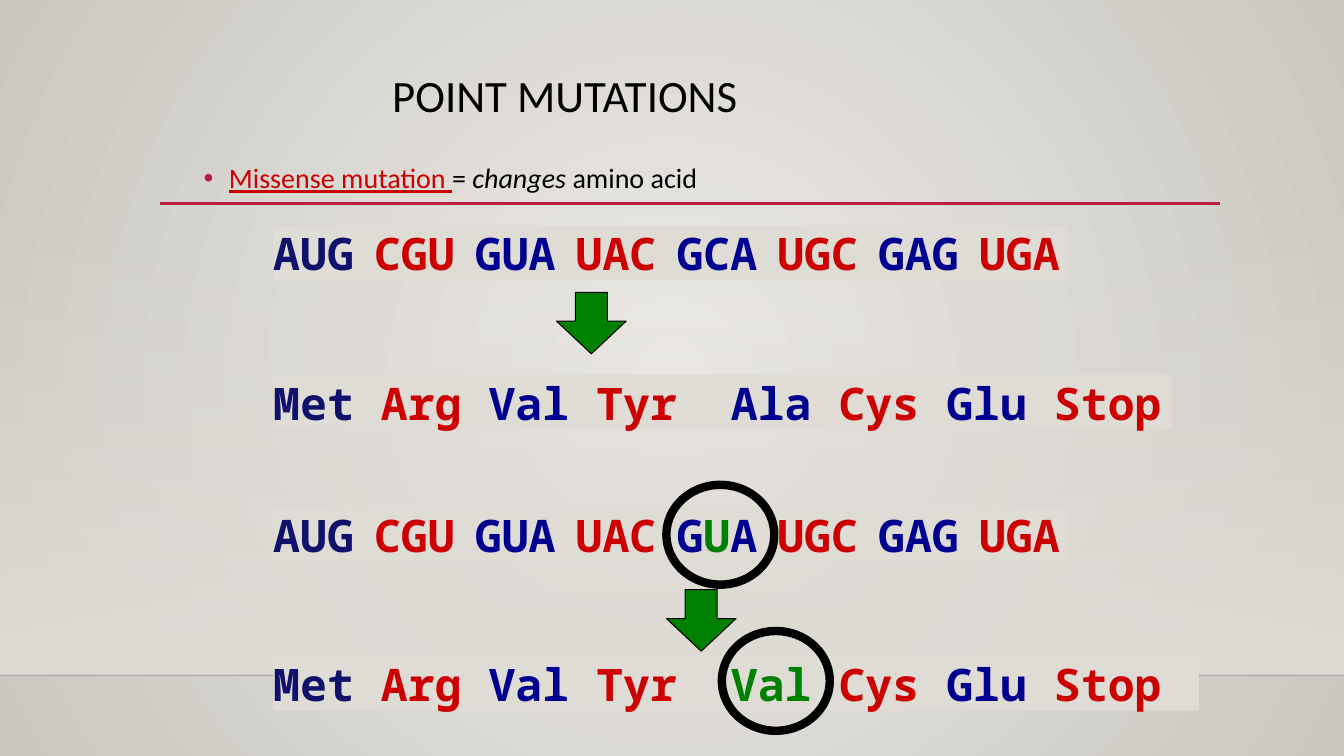
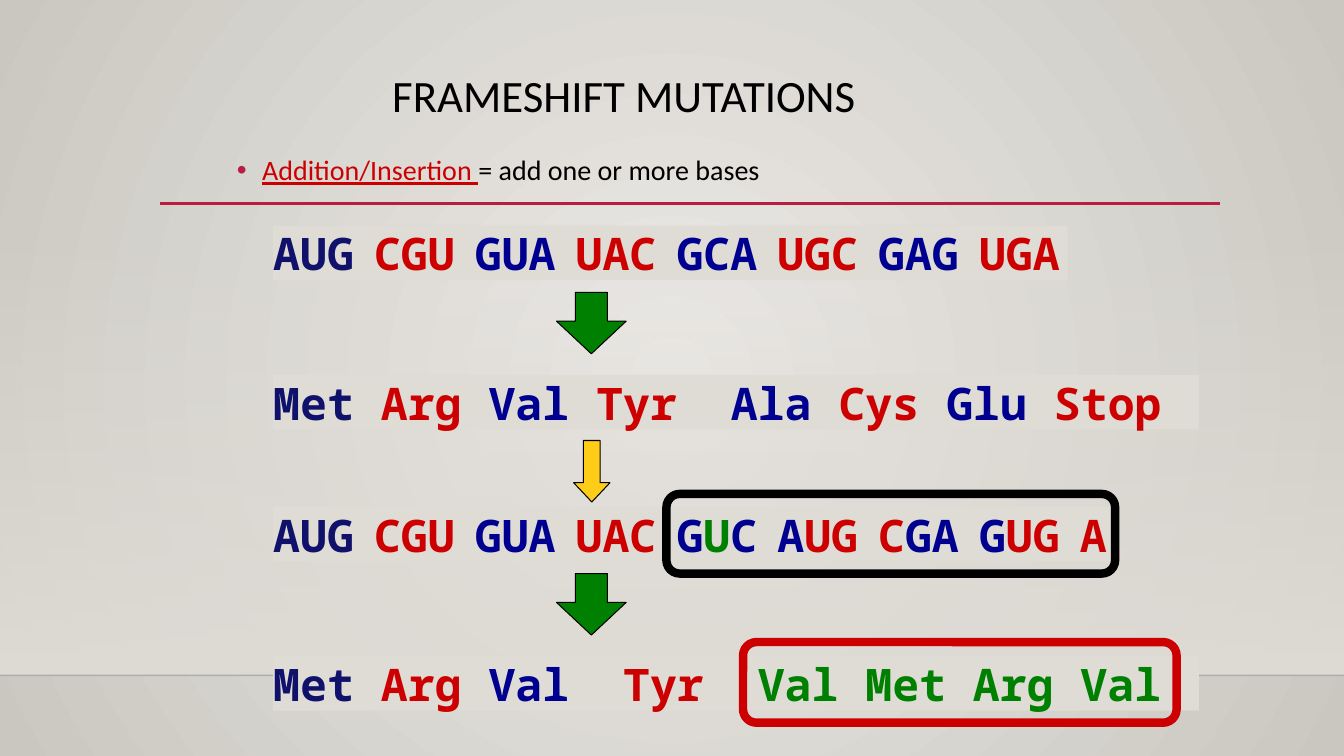
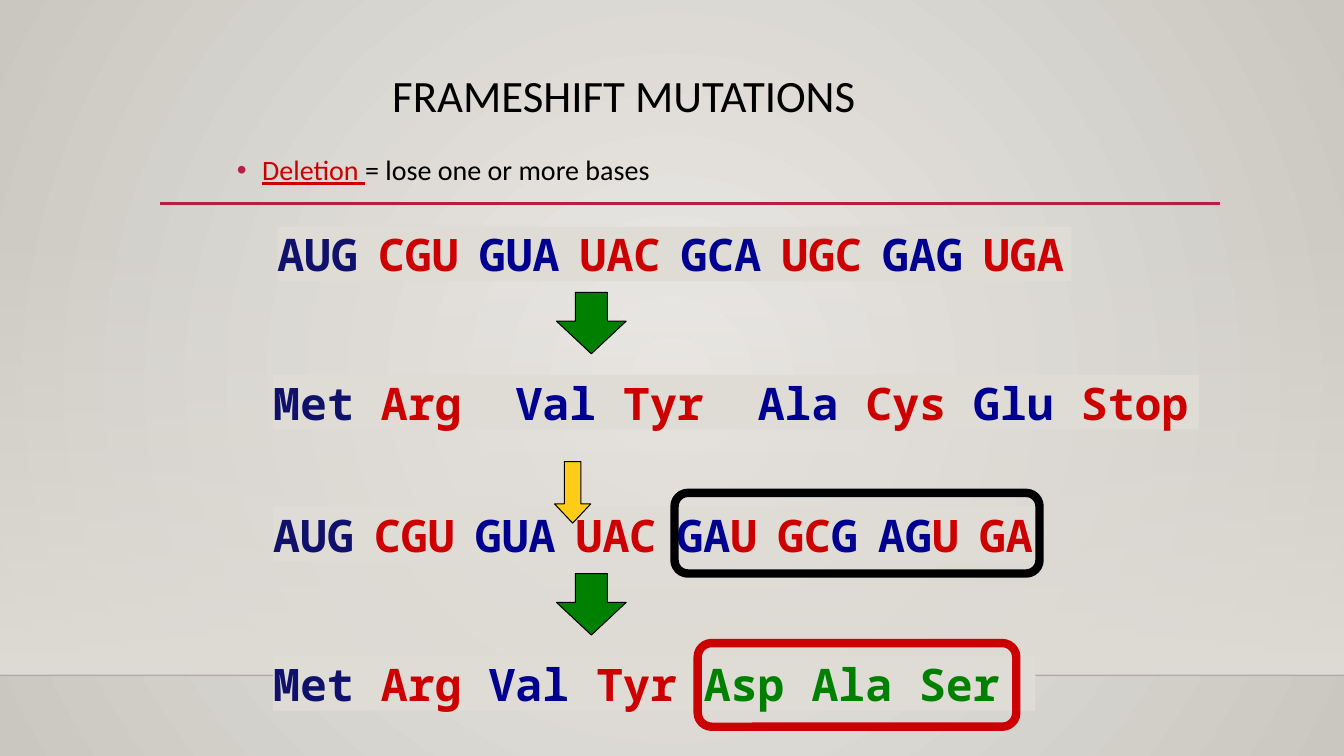
from pptx import Presentation
from pptx import util as u
from pptx.dml import color
from pptx.enum import shapes, text
from pptx.oxml import parse_xml
from pptx.oxml.ns import nsdecls, qn

C = {"navy": "0F116A", "red": "CC0000", "blue": "000090", "green": "008000",
     "gold": "FFCC18", "black": "000000", "accent": "B71E42", "panel": "DFDBD5",
     "edge": "000001", "glow": "ECEAE7", "rim": "CAC7C1"}
KEYS = {"n": "navy", "r": "red", "b": "blue", "g": "green"}
SANS, MONO = "Calibri", "Noto Sans Mono"
LEFT, ROW_H = 2.71, 0.54
ROW_TOPS = [2.24, 3.72, 5.03, 6.51]
RIGHT_ARROW_X, ARROW_X = 6.61, 5.52
DNA_START = "AUG\t|CGU\t|GUA\t|UAC\t|"
DNA = DNA_START + "GCA\t|UGC\t|GAG\t|UGA"
PROTEIN = "Met |Arg |Val |Tyr  |Ala |Cys |Glu |Stop"
NORMAL = "nrbrbrbr"
SHAPE = shapes.MSO_SHAPE


def rgb(name):
    return color.RGBColor.from_string(C[name])


def inches(box):
    return [u.Inches(v) for v in box]


def xml(tag, attrs="", inner=""):
    return parse_xml(f"<a:{tag} {nsdecls('a')} {attrs}>{inner}</a:{tag}>")


def gradient(first, last, direction, alpha=""):
    return xml("gradFill", 'rotWithShape="1"',
               f'<a:gsLst><a:gs pos="0"><a:srgbClr val="{C[first]}">{alpha}</a:srgbClr></a:gs>'
               f'<a:gs pos="100000"><a:srgbClr val="{C[last]}"/></a:gs></a:gsLst>{direction}')


def replace_gradient(fill, parent, new):
    fill.gradient()
    old = parent.find(qn("a:gradFill"))
    parent.replace(old, new)


def add_shape(s, kind, box, fill=None, line=None, width=0.75, adj=()):
    sp = s.shapes.add_shape(kind, *inches(box))
    sp.shadow.inherit = False
    for i, value in enumerate(adj):
        sp.adjustments[i] = value
    if fill:
        sp.fill.solid()
        sp.fill.fore_color.rgb = rgb(fill)
    else:
        sp.fill.background()
    if line:
        sp.line.color.rgb = rgb(line)
        sp.line.width = u.Pt(width)
    else:
        sp.line.fill.background()
    return sp


def add_line(s, x1, x2, y, name, width):
    ln = s.shapes.add_connector(shapes.MSO_CONNECTOR.STRAIGHT, *inches((x1, y, x2, y)))
    ln.line.color.rgb = rgb(name)
    ln.line.width = u.Pt(width)
    ln._element.spPr.append(xml("effectLst"))
    return ln


def add_run(p, txt, size, name, font, **style):
    r = p.add_run()
    r.text = txt
    r.font.size = u.Pt(size)
    r.font.name = font
    r.font.color.rgb = rgb(name)
    for key, value in style.items():
        setattr(r.font, key, value)


def build_master(prs, s):
    master = prs.slide_master
    fill = master.background.fill
    fill.solid()
    bg = master._element.cSld.find(qn("p:bg")).find(qn("p:bgPr"))
    replace_gradient(fill, bg, gradient(
        "glow", "rim",
        '<a:path path="circle"><a:fillToRect l="50000" t="50000" r="50000" b="50000"/></a:path>'))
    wall = add_shape(s, SHAPE.RECTANGLE, (0, 2.21, 13.33, 4.49))
    replace_gradient(wall.fill, wall._element.spPr, gradient(
        "panel", "panel", '<a:lin ang="5400000" scaled="0"/>', '<a:alpha val="0"/>'))
    floor = add_line(s, 0, 13.33, 6.7, "edge", 1)
    floor._element.spPr.find(".//" + qn("a:srgbClr")).append(xml("alpha", 'val="20000"'))
    rule = add_line(s, 1.59, 12.1, 2.02, "accent", 2.5)
    for i, sp in enumerate((wall, floor, rule)):
        master.shapes._spTree.insert(2 + i, sp._element)


def place(ph, box):
    ph.left, ph.top, ph.width, ph.height = inches(box)
    tf = ph.text_frame
    tf.word_wrap = True
    tf.auto_size = text.MSO_AUTO_SIZE.NONE
    tf.vertical_anchor = text.MSO_ANCHOR.TOP
    p = tf.paragraphs[0]
    p.alignment = text.PP_ALIGN.LEFT
    p.line_spacing = 0.9
    p.space_before = u.Pt(0)
    return p


def add_heading(s, title, runs, body_box):
    p = place(s.shapes.title, (3.79, 0.68, 7.21, 1.4))
    add_run(p, title, 32, "black", SANS)
    p = place(s.placeholders[1], body_box)
    pPr = p._p.get_or_add_pPr()
    pPr.set("marL", str(u.Inches(0.25)))
    pPr.set("indent", str(u.Inches(-0.25)))
    pPr.append(xml("buClr", "", f'<a:srgbClr val="{C["accent"]}"/>'))
    pPr.append(xml("buFont", 'typeface="Arial"'))
    pPr.append(xml("buChar", 'char="•"'))
    for txt, name, style in runs:
        add_run(p, txt, 20, name, SANS, **style)


def add_sequence(s, x, y, w, parts, keys):
    sp = add_shape(s, SHAPE.RECTANGLE, (x, y, w, ROW_H), "panel")
    tf = sp.text_frame
    tf.margin_left = tf.margin_right = tf.margin_top = tf.margin_bottom = 0
    tf.word_wrap = True
    tf.vertical_anchor = text.MSO_ANCHOR.MIDDLE
    p = tf.paragraphs[0]
    p.alignment = text.PP_ALIGN.LEFT
    stops = "".join(f'<a:tab pos="{u.Inches(i)}" algn="l"/>' for i in range(1, 9))
    p._p.get_or_add_pPr().append(xml("tabLst", "", stops))
    for part, key in zip(parts.split("|"), keys):
        add_run(p, part, 32, KEYS[key], MONO, bold=True)


def add_arrow(s, x, y, w=0.69, fill="green"):
    add_shape(s, SHAPE.DOWN_ARROW, (x, y, w, 0.61), fill, "black", adj=(0.46, 0.53 * 0.61 / min(w, 0.61)
              if w > 0.61 else 0.53))


def add_mutation(s, title, runs, body_box, rows, arrows, rings):
    add_heading(s, title, runs, body_box)
    for y, (w, parts, keys, dx, dy) in zip(ROW_TOPS, rows):
        add_sequence(s, LEFT + dx, y + dy, w, parts, keys)
    for arrow in arrows:
        add_arrow(s, *arrow)
    for kind, box, line in rings:
        add_shape(s, kind, box, None, line, 6)


def row(w, parts, keys=NORMAL, dx=0, dy=0):
    return w, parts, keys, dx, dy


def term(name, meaning):
    return [(name, "red", {"underline": True}), (meaning, "black", {})]


def main():
    prs = Presentation()
    prs.slide_width, prs.slide_height = inches((13.33, 7.5))
    slides = [prs.slides.add_slide(prs.slide_layouts[1]) for _ in range(3)]
    build_master(prs, slides[0])
    shift_body = (2.25, 1.5, 9.19, 1.06)
    shift_arrows = [(ARROW_X, 2.9), (ARROW_X, 5.69)]

    add_mutation(
        slides[0], "POINT MUTATIONS",
        term("Missense mutation ", "= ")
        + [("changes", "black", {"italic": True}), (" amino acid", "black", {})],
        (1.92, 1.58, 9.53, 0.97),
        [row(7.88, DNA),
         row(8.91, PROTEIN),
         row(7.88, DNA_START + "G|U|A\t|UGC\t|GAG\t|UGA", "nrbrbgbrbr"),
         row(9.18, PROTEIN.replace("Ala", "Val"), "nrbrgrbr")],
        [(ARROW_X, 2.9), (RIGHT_ARROW_X, 5.85)],
        [(SHAPE.OVAL, (6.61, 4.81, 1.07, 0.99), "black"),
         (SHAPE.OVAL, (7.16, 6.26, 1.07, 0.99), "black")])

    add_mutation(
        slides[1], "FRAMESHIFT MUTATIONS",
        term("Addition/Insertion ", "= add one or more bases"), shift_body,
        [row(7.88, DNA),
         row(9.18, PROTEIN),
         row(8.35, DNA_START + "G|U|C\tA|UG\tC|GA\tG|UG\tA", "nrbrbgbrbr"),
         row(9.18, "Met |Arg |Val  |Tyr  |Val Met Arg Val", "nrbrg")],
        shift_arrows + [(5.69, 4.37, 0.36, "gold")],
        [(SHAPE.ROUNDED_RECTANGLE, (6.61, 4.9, 4.45, 0.79), "black"),
         (SHAPE.ROUNDED_RECTANGLE, (7.37, 6.37, 4.3, 0.8), "red")])

    add_mutation(
        slides[2], "FRAMESHIFT MUTATIONS",
        term("Deletion ", "= lose one or more bases"), shift_body,
        [row(7.88, DNA, dx=0.04, dy=0.01),
         row(9.18, PROTEIN.replace("Arg ", "Arg  ")),
         row(7.61, DNA_START + "GA|U\tGC|G\tAG|U\tGA", "nrbrbrbr"),
         row(7.56, "Met |Arg |Val |Tyr |Asp Ala Ser", "nrbrg")],
        shift_arrows + [(5.5, 4.58, 0.36, "gold")],
        [(SHAPE.ROUNDED_RECTANGLE, (6.69, 4.89, 3.62, 0.8), "black"),
         (SHAPE.ROUNDED_RECTANGLE, (6.92, 6.38, 3.16, 0.83), "red")])

    prs.save("out.pptx")


if __name__ == "__main__":
    main()
